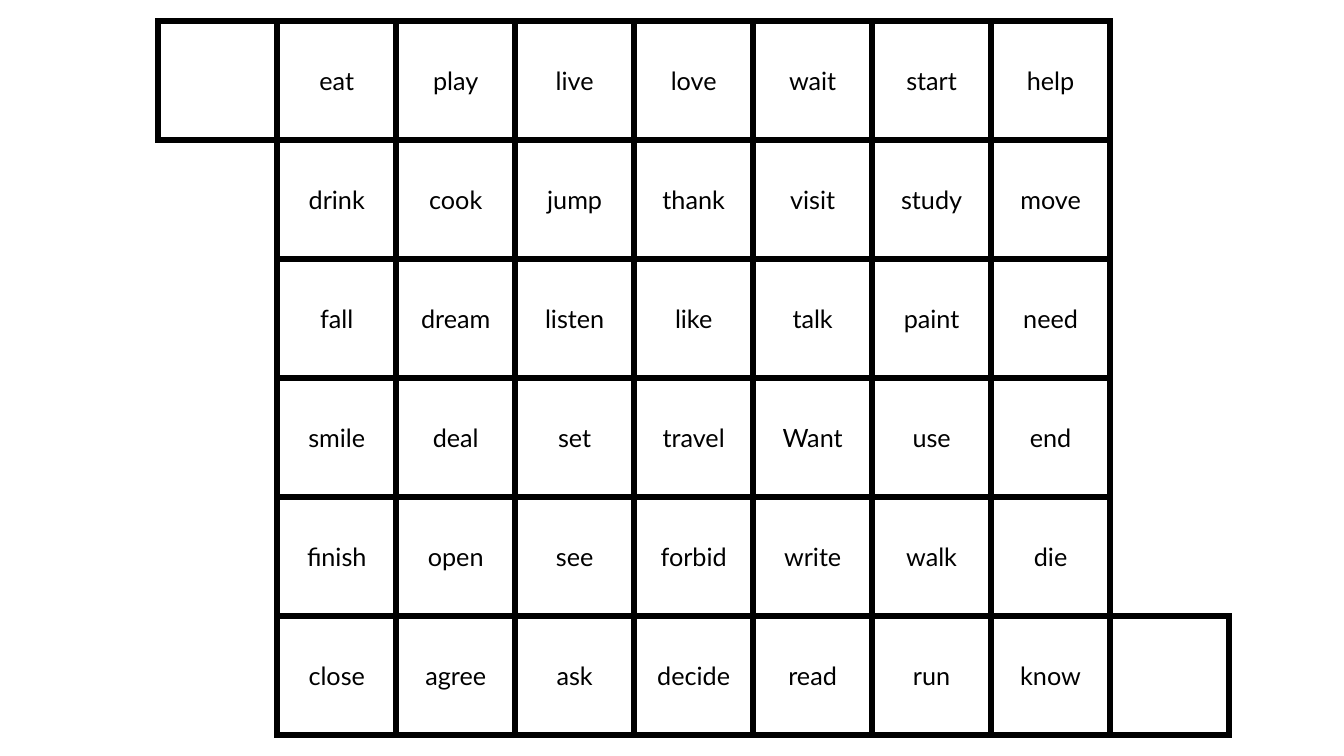
from dataclasses import dataclass

from lxml.etree import SubElement
from pptx import Presentation
from pptx.dml.color import RGBColor
from pptx.enum.shapes import MSO_SHAPE
from pptx.enum.text import MSO_ANCHOR, PP_ALIGN
from pptx.oxml.ns import qn
from pptx.slide import Slide
from pptx.util import Inches, Pt

BLACK = RGBColor(0x00, 0x00, 0x00)
WHITE = RGBColor(0xFF, 0xFF, 0xFF)
FONT = "Lato"
LEFT, TOP, SIDE = 1.57, 0.21, 1.18

VERBS = (
    "eat play live love wait start help",
    "drink cook jump thank visit study move",
    "fall dream listen like talk paint need",
    "smile deal set travel Want use end",
    "finish open see forbid write walk die",
    "close agree ask decide read run know",
)


@dataclass(frozen=True)
class Square:
    col: int
    row: int
    verb: str = ""


def list_squares() -> list[Square]:
    squares = [
        Square(col, row, verb)
        for row, line in enumerate(VERBS)
        for col, verb in enumerate(line.split(), start=1)
    ]
    start = Square(0, 0)
    finish = Square(len(VERBS[-1].split()) + 1, len(VERBS) - 1)
    return [start, *squares, finish]


def draw_square(slide: Slide, square: Square) -> None:
    shape = slide.shapes.add_shape(
        MSO_SHAPE.RECTANGLE,
        Inches(LEFT + square.col * SIDE),
        Inches(TOP + square.row * SIDE),
        Inches(SIDE),
        Inches(SIDE),
    )
    shape.shadow.inherit = False
    shape.fill.solid()
    shape.fill.fore_color.rgb = WHITE
    shape.line.color.rgb = BLACK
    shape.line.width = Pt(4.5)
    border = shape.element.spPr.find(qn("a:ln"))
    SubElement(border, qn("a:miter"), lim="800000")
    if square.verb:
        write_verb(shape.text_frame, square.verb)


def write_verb(frame, verb: str) -> None:
    frame.vertical_anchor = MSO_ANCHOR.MIDDLE
    label = frame.paragraphs[0]
    label.text = verb
    label.alignment = PP_ALIGN.CENTER
    label.font.name = FONT
    label.font.size = Pt(18)
    label.font.color.rgb = BLACK


def main() -> None:
    deck = Presentation()
    deck.slide_width = Inches(13.33)
    deck.slide_height = Inches(7.5)
    slide = deck.slides.add_slide(deck.slide_layouts[6])
    for square in list_squares():
        draw_square(slide, square)
    deck.save("out.pptx")


if __name__ == "__main__":
    main()
